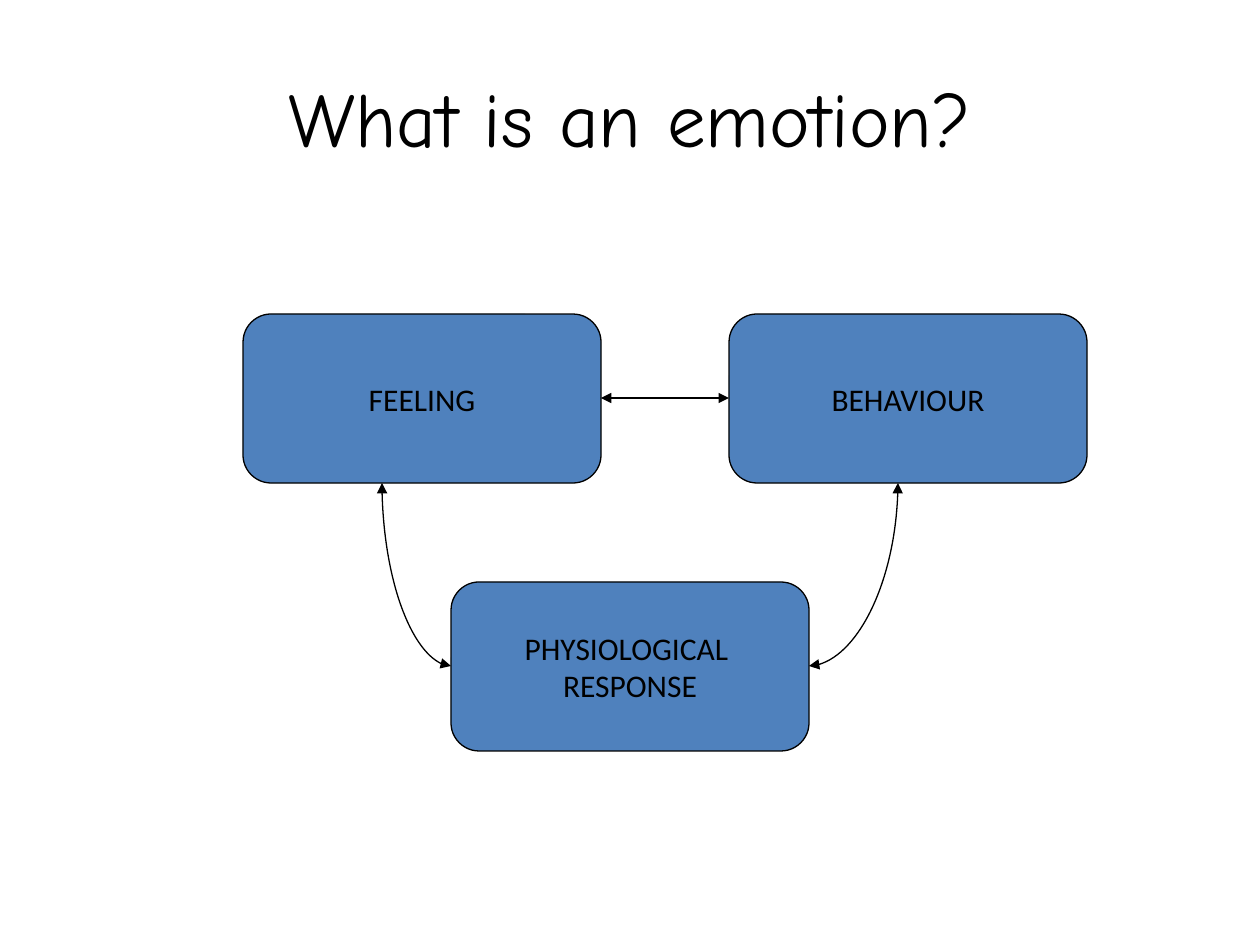
import pptx
import pptx.util
import pptx.dml.color
import pptx.enum.shapes
import pptx.enum.text
import pptx.oxml
import pptx.oxml.ns

EMU_PER_PX = 914400 / 126
COLORS = {"text": "000000", "line": "000000", "box": "4F81BD"}
BOX_W, BOX_H = 358, 169
TOP_Y, BOTTOM_Y = 314, 582
FEELING_X, RESPONSE_X, BEHAVIOUR_X = 243, 451, 729
TITLE_FONT = {"name": "Comic Neue", "size": pptx.util.Pt(44)}
BOX_FONT = {"name": "Calibri", "size": pptx.util.Pt(18)}


def px(n):
    """Turn pixels into EMU."""
    return pptx.util.Emu(round(n * EMU_PER_PX))


def color(key):
    """Look up a colour of the slide."""
    return pptx.dml.color.RGBColor.from_string(COLORS[key])


def set_text(s, lines, font, wrap):
    """Write centred lines into a shape."""
    tf = s.text_frame
    tf.word_wrap = wrap
    tf.vertical_anchor = pptx.enum.text.MSO_ANCHOR.MIDDLE
    tf.text = "\n".join(lines)
    for p in tf.paragraphs:
        p.alignment = pptx.enum.text.PP_ALIGN.CENTER
        for r in p.runs:
            for name, value in font.items():
                setattr(r.font, name, value)
            r.font.color.rgb = color("text")


def set_line(s):
    """Give a shape or connector the thin outline."""
    s.line.width = pptx.util.Pt(0.75)
    s.line.fill.solid()
    s.line.fill.fore_color.rgb = color("line")


def add_title(slide, text):
    """Place and fill the title."""
    s = slide.shapes.title
    bounds = {"left": 63, "top": 38, "width": 1134, "height": 157}
    for name, value in bounds.items():
        setattr(s, name, px(value))
    set_text(s, [text], TITLE_FONT, True)


def add_box(slide, x, y, *lines):
    """Add one labelled component of emotion."""
    kind = pptx.enum.shapes.MSO_SHAPE.FLOWCHART_ALTERNATE_PROCESS
    s = slide.shapes.add_shape(kind, px(x), px(y), px(BOX_W), px(BOX_H))
    s.shadow.inherit = False
    s.fill.solid()
    s.fill.fore_color.rgb = color("box")
    set_line(s)
    set_text(s, lines, BOX_FONT, False)


def add_arrow(slide, start, end, preset="line"):
    """Add a two-headed arrow that leaves its start sideways."""
    kind = pptx.enum.shapes.MSO_CONNECTOR.STRAIGHT
    s = slide.shapes.add_connector(kind, *map(px, start + end))
    set_line(s)
    qn = pptx.oxml.ns.qn
    sp_pr = s.element.spPr
    sp_pr.find(qn("a:prstGeom")).set("prst", preset)
    ln = sp_pr.find(qn("a:ln"))
    for tag in ("headEnd", "tailEnd"):
        ln.append(ln.makeelement(qn(f"a:{tag}"), {"type": "triangle"}))
    sp_pr.append(sp_pr.makeelement(qn("a:effectLst"), {}))


def main():
    """Build the slide and save it."""
    prs = pptx.Presentation()
    prs.slide_width, prs.slide_height = px(1260), px(945)
    slide = prs.slides.add_slide(prs.slide_layouts[5])
    add_title(slide, "What is an emotion?")
    add_box(slide, FEELING_X, TOP_Y, "FEELING")
    add_box(slide, RESPONSE_X, BOTTOM_Y, "PHYSIOLOGICAL ", "RESPONSE")
    add_box(slide, BEHAVIOUR_X, TOP_Y, "BEHAVIOUR")
    top_mid, bottom_mid = TOP_Y + BOX_H // 2, BOTTOM_Y + BOX_H // 2
    top_edge = TOP_Y + BOX_H
    for side_x, up_x in ((RESPONSE_X, 382), (RESPONSE_X + BOX_W, 898)):
        add_arrow(slide, (side_x, bottom_mid), (up_x, top_edge), "curvedConnector2")
    add_arrow(slide, (FEELING_X + BOX_W, top_mid), (BEHAVIOUR_X, top_mid))
    prs.save("out.pptx")


if __name__ == "__main__":
    main()
